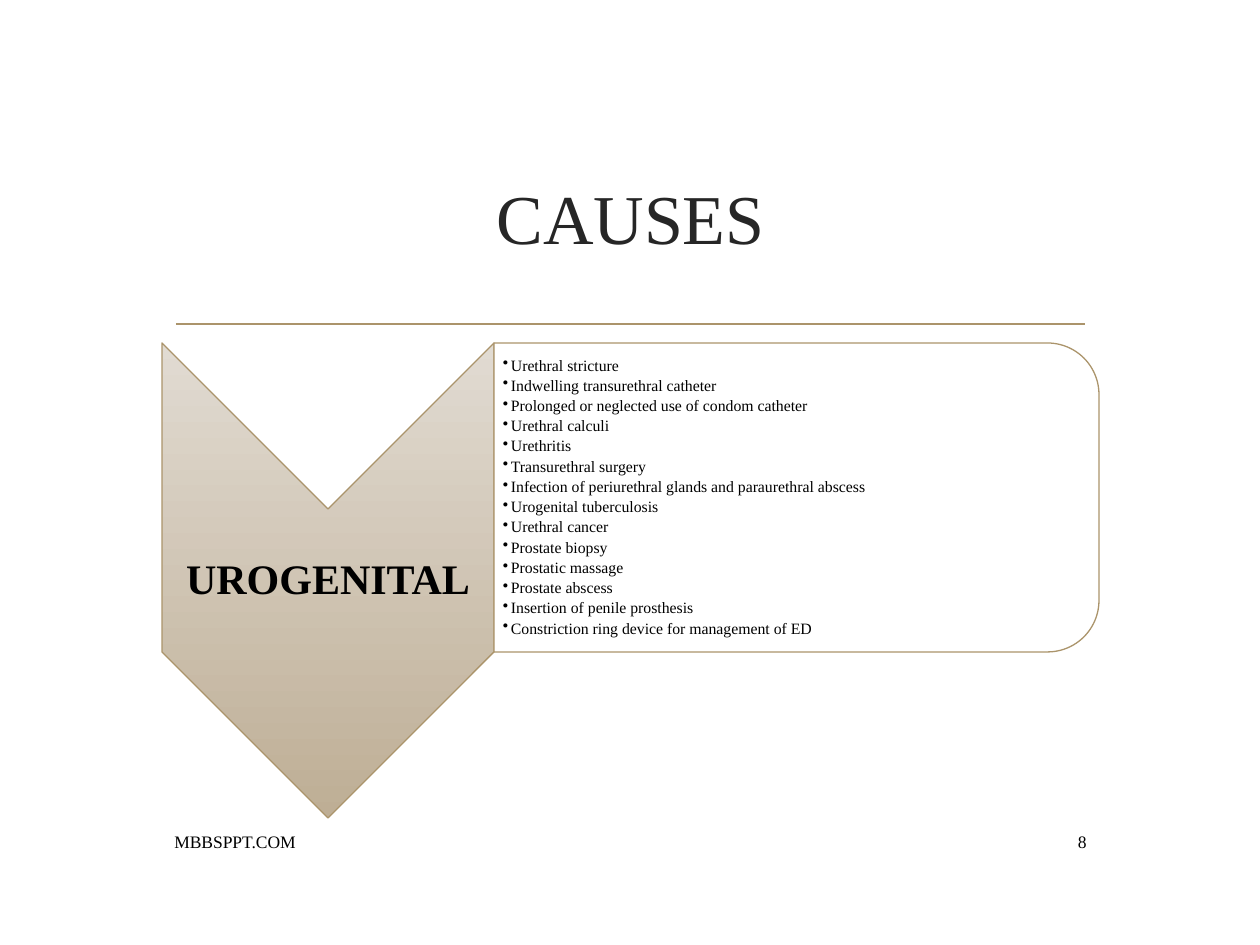
from dataclasses import dataclass

from lxml.etree import SubElement
from pptx import Presentation
from pptx.dml.color import RGBColor
from pptx.enum.shapes import MSO_CONNECTOR, MSO_SHAPE
from pptx.enum.text import MSO_ANCHOR, PP_ALIGN
from pptx.oxml.ns import qn
from pptx.util import Emu, Pt

SCALE = 914400 / 126


@dataclass(frozen=True)
class Theme:
    font: str = "Times New Roman"
    ink: str = "000000"
    title: str = "262626"
    edge: str = "AB946B"
    panel: str = "FFFFFF"
    light: str = "E1DBD2"
    dark: str = "BEAE95"
    big: int = 40
    head: int = 24
    small: int = 10
    item: int = 9
    thick: float = 1.25
    thin: float = 0.75


THEME = Theme()

CAUSES = [
    "Urethral stricture",
    "Indwelling transurethral catheter",
    "Prolonged or neglected use of condom catheter",
    "Urethral calculi",
    "Urethritis",
    "Transurethral surgery",
    "Infection of periurethral glands and paraurethral abscess",
    "Urogenital tuberculosis",
    "Urethral cancer",
    "Prostate biopsy",
    "Prostatic massage",
    "Prostate abscess",
    "Insertion of penile prosthesis",
    "Constriction ring device for management of ED",
]


def px(n):
    return Emu(round(n * SCALE))


def rgb(code):
    return RGBColor.from_string(code)


def add_rule(slide, x1, x2, y):
    rule = slide.shapes.add_connector(
        MSO_CONNECTOR.STRAIGHT, px(x1), px(y), px(x2), px(y))
    rule.line.color.rgb = rgb(THEME.edge)
    rule.line.width = Pt(THEME.thick)
    SubElement(rule._element.spPr, qn("a:effectLst"))


def add_turned(slide, kind, x, y, w, h):
    """Add a shape turned by 90 degrees that covers the box x, y, w, h."""
    shift = (w - h) / 2
    shape = slide.shapes.add_shape(
        kind, px(x + shift), px(y - shift), px(h), px(w))
    shape.rotation = 90
    shape.shadow.inherit = False
    shape.line.color.rgb = rgb(THEME.edge)
    shape.line.width = Pt(THEME.thin)
    return shape


def fade(shape):
    """Shade from light at the top to dark at the bottom of the slide."""
    fill = shape.fill
    fill.gradient()
    fill.gradient_angle = 270
    for stop, code, place in zip(
            fill.gradient_stops, (THEME.light, THEME.dark), (0, 1)):
        stop.color.rgb = rgb(code)
        stop.position = place
    grad = shape._element.spPr.find(qn("a:gradFill"))
    grad.set("rotWithShape", "0")


def tint(shape, code, alpha):
    shape.fill.solid()
    shape.fill.fore_color.rgb = rgb(code)
    color = shape._element.spPr.find(qn("a:solidFill"))[0]
    SubElement(color, qn("a:alpha"), val=str(alpha * 1000))


def add_bullet(para, indent):
    props = para._p.get_or_add_pPr()
    props.set("marL", str(px(indent)))
    props.set("indent", str(-px(indent)))
    SubElement(props, qn("a:buChar"), char="•")


def add_text(slide, box, lines, size, color=THEME.ink, align=PP_ALIGN.LEFT,
             bold=False, insets=None, bullet=0, pitch=None, after=0):
    frame = slide.shapes.add_textbox(*map(px, box)).text_frame
    frame.word_wrap = True
    frame.vertical_anchor = MSO_ANCHOR.MIDDLE
    if insets:
        (frame.margin_left, frame.margin_top,
         frame.margin_right, frame.margin_bottom) = map(px, insets)
    for i, line in enumerate(lines):
        para = frame.add_paragraph() if i else frame.paragraphs[0]
        if bullet:
            add_bullet(para, bullet)
        para.alignment = align
        if pitch:
            para.line_spacing = pitch
        para.space_after = Pt(after)
        run = para.add_run()
        run.text = line
        run.font.name = THEME.font
        run.font.size = Pt(size)
        run.font.bold = bold
        run.font.color.rgb = rgb(color)


def main():
    deck = Presentation()
    deck.slide_width, deck.slide_height = px(1260), px(945)
    slide = deck.slides.add_slide(deck.slide_layouts[6])

    # Title and rule
    add_rule(slide, 176, 1085, 324)
    add_text(slide, (162, 126, 937, 180), ["CAUSES"], THEME.big,
             THEME.title, PP_ALIGN.CENTER)

    # Category arrow
    arrow = add_turned(slide, MSO_SHAPE.CHEVRON, 162, 343, 332, 475)
    fade(arrow)
    add_text(slide, (162, 509, 332, 143), ["UROGENITAL"], THEME.head,
             align=PP_ALIGN.CENTER, bold=True, insets=(2, 2, 2, 2), pitch=0.9)

    # Panel of causes
    panel = add_turned(slide, MSO_SHAPE.ROUND_2_SAME_RECTANGLE,
                       494, 343, 605, 309)
    tint(panel, THEME.panel, 90)
    add_text(slide, (494, 358, 590, 279), CAUSES, THEME.item,
             insets=(9, 1, 1, 1), bullet=8, pitch=0.9, after=1.8)

    # Footer
    add_text(slide, (162, 822, 703, 39), ["MBBSPPT.COM"], THEME.small)
    add_text(slide, (1045, 822, 54, 39), ["8"], THEME.small,
             align=PP_ALIGN.RIGHT)

    deck.save("out.pptx")


if __name__ == "__main__":
    main()
